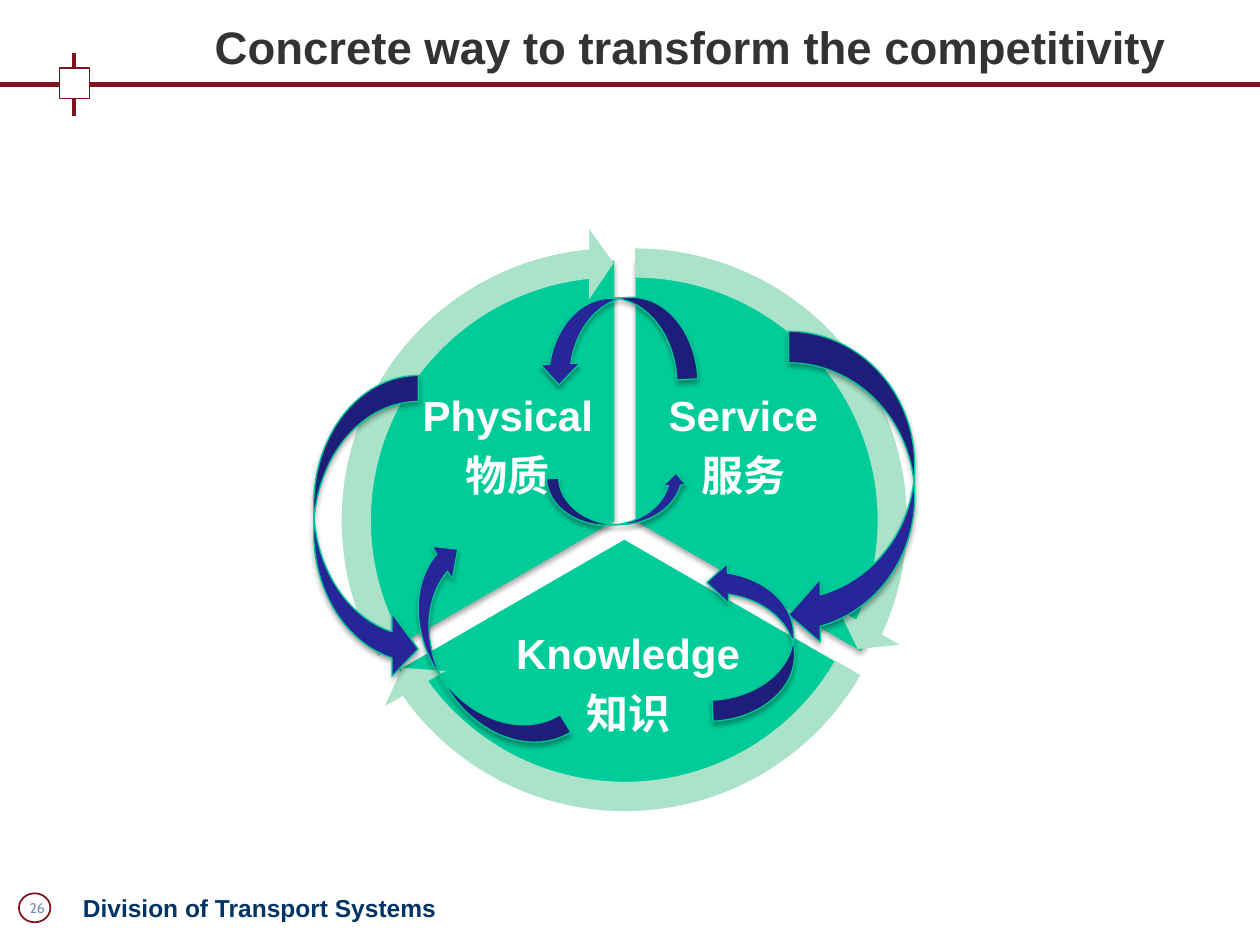
from lxml.etree import SubElement
from pptx import Presentation
from pptx.dml.color import RGBColor
from pptx.enum.shapes import MSO_CONNECTOR, MSO_SHAPE
from pptx.enum.text import MSO_ANCHOR, PP_ALIGN
from pptx.oxml.ns import qn
from pptx.util import Inches, Pt

THEME = {
    "maroon": "7F141D", "white": "FFFFFF", "title": "333333", "footer": "003366",
    "number": "718EB5", "sector": "00CC99", "rim": "ABE2CA", "arrow": "262699",
    "edge": "00C896", "shadow": "000000",
    "title_size": 26, "label_size": 24, "footer_size": 14, "number_size": 8,
    "font": "Arial", "number_font": "Cabin",
}

TITLE = "Concrete way to transform the competitivity"
FOOTER = "Division of Transport Systems"
PAGE_NUMBER = "26"

# Sectors: label lines, label box, pie corner, pie angles, rim corner, rim angles
# Angles are in units of 100000 sixty-thousandths of a degree.
SECTORS = [
    (["Service", "服务"], (5.16, 2.94, 1.48, 1.23), (2.98, 2.07), (162, 18),
     (2.72, 1.81), (14.73, 161.99)),
    (["Knowledge", "知识"], (3.88, 4.9, 2.21, 1.08), (2.89, 2.22), (18, 90),
     (2.64, 1.96), (86.72, 18)),
    (["Physical", "物质"], (3.29, 2.94, 1.48, 1.23), (2.81, 2.07), (90, 162),
     (2.55, 1.81), (158.73, 90)),
]
PIE_SIZE, RIM_SIZE = 4.13, 4.64

# Exchange arrows: frame, rotation, flip attribute, bend
ARROWS = [
    ((6.26, 2.63, 1, 2.5), 0, None, 0.5),
    ((2.49, 2.98, 0.83, 2.42), 0, "flipH", 0.6),
    ((3.44, 4.26, 0.65, 1.86), 148.3, None, 0.47),
    ((5.63, 4.45, 0.67, 1.26), 177.4, "flipH", 0.47),
    ((4.56, 2.07, 0.67, 1.26), 87.5, "flipH", 0.47),
    ((4.71, 3.41, 0.39, 1.12), 87.5, "flipV", 0.47),
]


def color(name):
    return RGBColor.from_string(THEME[name])


def inches(values):
    return [Inches(value) for value in values]


def apply(target, values):
    for name, value in values.items():
        setattr(target, name, value)


def add_shadow(shape):
    effects = shape._element.spPr.find(qn("a:effectLst"))
    outer = SubElement(effects, qn("a:outerShdw"), blurRad=str(Pt(3.1)),
                       dist=str(Pt(1.8)), dir="5400000", rotWithShape="0")
    tint = SubElement(outer, qn("a:srgbClr"), val=THEME["shadow"])
    SubElement(tint, qn("a:alpha"), val="35000")


def add_shape(page, kind, frame, fill=None, line=None, width=0.75,
              adjustments=(), shadow=False):
    shape = page.shapes.add_shape(kind, *inches(frame))
    shape.shadow.inherit = False
    for index, value in enumerate(adjustments):
        shape.adjustments[index] = value
    if fill:
        shape.fill.solid()
        shape.fill.fore_color.rgb = color(fill)
    else:
        shape.fill.background()
    if line:
        shape.line.color.rgb = color(line)
        shape.line.width = Pt(width)
    else:
        shape.line.fill.background()
    if shadow:
        add_shadow(shape)
    return shape


def add_line(page, ends, width):
    line = page.shapes.add_connector(MSO_CONNECTOR.STRAIGHT, *inches(ends))
    line.line.color.rgb = color("maroon")
    line.line.width = Pt(width)
    SubElement(line._element.spPr, qn("a:effectLst"))


def write(box, lines, size, ink, font="font", bold=True, box_format=None, para_format=None):
    text_frame = box.text_frame
    apply(text_frame, {"word_wrap": True, **(box_format or {})})
    for index, text in enumerate(lines):
        para = text_frame.add_paragraph() if index else text_frame.paragraphs[0]
        apply(para, para_format or {})
        span = para.add_run()
        span.text = text
        apply(span.font, {"name": THEME[font], "size": Pt(THEME[size]), "bold": bold})
        span.font.color.rgb = color(ink)


def add_text(page, frame, *args, **kwargs):
    write(page.shapes.add_textbox(*inches(frame)), *args, **kwargs)


def add_frame(page):
    # Header rule with its square, then the footer
    add_line(page, (0.59, 0.42, 0.59, 0.92), 2.25)
    add_line(page, (0, 0.67, 10, 0.67), 3)
    add_shape(page, MSO_SHAPE.RECTANGLE, (0.47, 0.54, 0.24, 0.24), "white", "maroon")
    add_text(page, (0.12, 7.09, 0.35, 0.24), [PAGE_NUMBER], "number_size", "number",
             font="number_font", bold=False, para_format={"alignment": PP_ALIGN.CENTER})
    add_shape(page, MSO_SHAPE.OVAL, (0.15, 7.09, 0.25, 0.23), None, "maroon", 1)
    add_text(page, (0.56, 7.04, 4.33, 0.33), [FOOTER], "footer_size", "footer")


def add_title(page):
    title = page.shapes.title
    apply(title, dict(zip(("left", "top", "width", "height"),
                          inches((0.89, 0.14, 8.47, 0.46)))))
    write(title, [TITLE], "title_size", "title",
          box_format={"vertical_anchor": MSO_ANCHOR.MIDDLE},
          para_format={"alignment": PP_ALIGN.RIGHT})


def add_cycle(page):
    margins = ("margin_left", "margin_top", "margin_right", "margin_bottom")
    label_box = {"vertical_anchor": MSO_ANCHOR.MIDDLE,
                 **dict.fromkeys(margins, Inches(0.03))}
    label_para = {"alignment": PP_ALIGN.CENTER, "line_spacing": 0.9,
                  "space_after": Pt(8.4)}
    # Pies with their labels
    for lines, label, corner, angles, _, _ in SECTORS:
        add_shape(page, MSO_SHAPE.PIE, (*corner, PIE_SIZE, PIE_SIZE), "sector",
                  adjustments=angles, shadow=True)
        add_text(page, label, lines, "label_size", "white",
                 box_format=label_box, para_format=label_para)
    # Rim arrows
    for *_, corner, angles in SECTORS:
        add_shape(page, MSO_SHAPE.CIRCULAR_ARROW, (*corner, RIM_SIZE, RIM_SIZE), "rim",
                  adjustments=(0.05, 3.28, *angles, 0.06))
    # Exchange arrows between sectors
    for frame, rotation, flip, bend in ARROWS:
        arrow = add_shape(page, MSO_SHAPE.CURVED_LEFT_ARROW, frame, "arrow", "edge",
                          adjustments=(0.25, bend, 0.25), shadow=True)
        arrow.rotation = rotation
        if flip:
            arrow._element.spPr.xfrm.set(flip, "1")


def main():
    deck = Presentation()
    apply(deck, {"slide_width": Inches(10), "slide_height": Inches(7.5)})
    page = deck.slides.add_slide(deck.slide_layouts[5])
    add_frame(page)
    add_title(page)
    add_cycle(page)
    deck.save("out.pptx")


if __name__ == "__main__":
    main()
